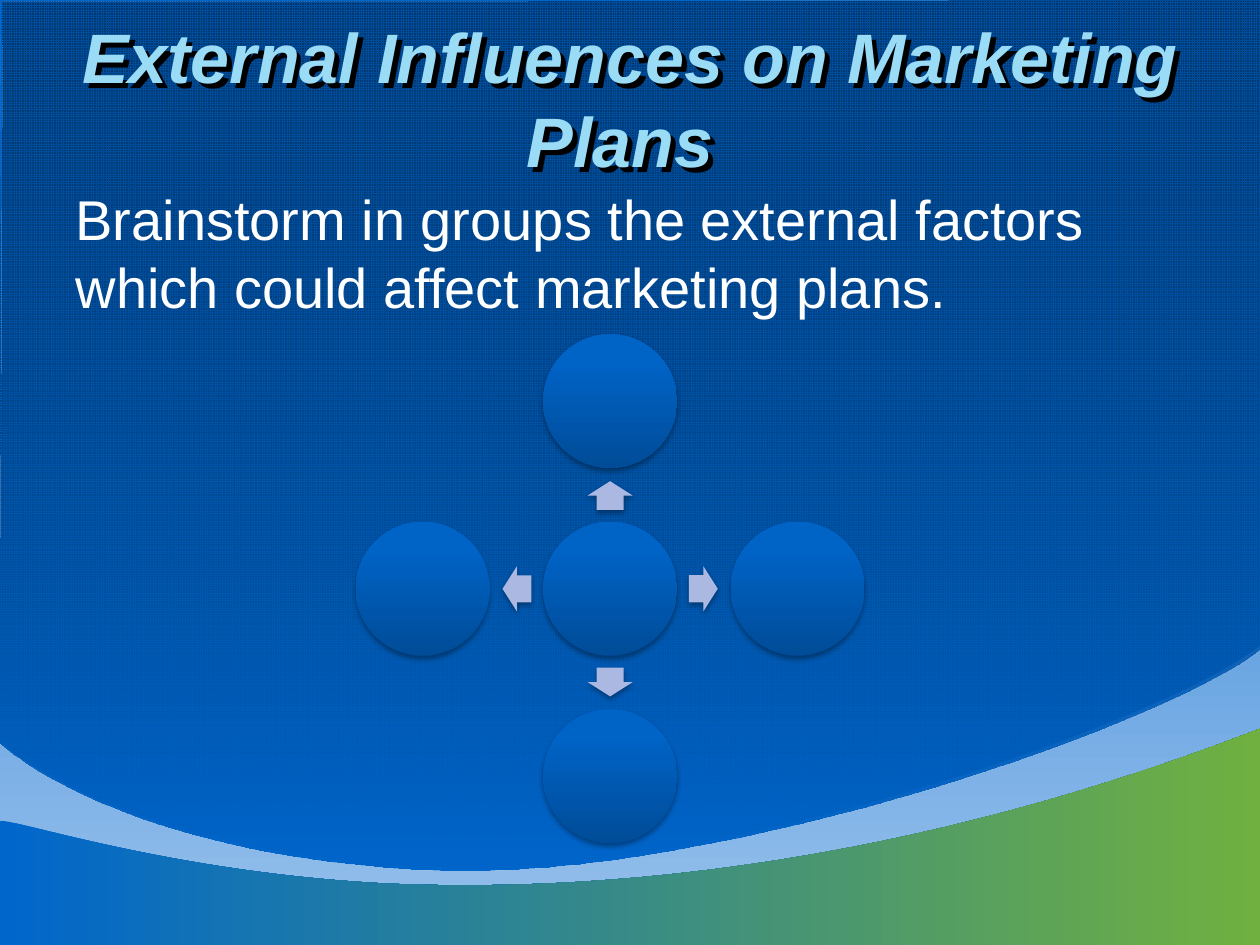
"""Builds the slide on external influences on marketing plans."""
import math

from lxml import etree
from pptx import Presentation
from pptx import util as u
from pptx.dml.color import RGBColor
from pptx.enum import dml, shapes, text
from pptx.oxml import ns


class Theme:
    font = "Arial"
    title_size, body_size = u.Pt(40), u.Pt(32)
    title, body = RGBColor.from_string("9ADCF6"), RGBColor.from_string("FFFFFF")
    blue, navy = "0066CC", "002F5E"
    grid, pale, green = "003D7B", "98C1EC", "70B040"
    ball_low, ball_high = "004C98", "0063C6"
    arrow = RGBColor.from_string("ABB8E2")


def gradient(fill, first, last, clockwise, end=1):
    fill.gradient()
    fill.gradient_angle = (360 - clockwise) % 360
    for stop, colour, pos in zip(fill.gradient_stops, (first, last), (0, end)):
        stop.color.rgb = RGBColor.from_string(colour)
        stop.position = pos


def add_shadow(sp, blur, dist, angle, opacity):
    sp.shadow.inherit = False
    effects = sp._element.spPr.find(ns.qn("a:effectLst"))
    shadow = etree.SubElement(effects, ns.qn("a:outerShdw"), blurRad=str(u.Pt(blur)),
                              dist=str(u.Pt(dist)), dir=str(angle * 60000), rotWithShape="0")
    colour = etree.SubElement(shadow, ns.qn("a:srgbClr"), val="000000")
    etree.SubElement(colour, ns.qn("a:alpha"), val=str(opacity * 1000))


prs = Presentation()
prs.slide_width, prs.slide_height = u.Cm(25.4), u.Cm(19.05)
s = prs.slides.add_slide(prs.slide_layouts[1])
gradient(s.background.fill, Theme.blue, Theme.pale, 90)

sky = [(-0.05, 14.91), (0.25, 15.21), (2.79, 17.22), (8.69, 17.48),
       (14.58, 17.73), (23.8, 14.4), (25.43, 12.98),
       (25.43, -0.05), (0, 0), (0.03, 0.05)]
ground = [(0, 16.56), (0.08, 16.43), (3.3, 17.58), (7.77, 17.81),
          (12.24, 18.01), (18.36, 17.42), (25.43, 14.68),
          (25.4, 19.13), (-0.05, 19.1)]
waves = []
for outline, shift in ((sky, 0), (sky, 0.05), (ground, 0)):
    points = [(u.Cm(x + shift), u.Cm(y + shift)) for x, y in outline]
    builder = s.shapes.build_freeform(*points[0])
    builder.add_line_segments(points[1:], close=True)
    sp = builder.convert_to_shape()
    sp.line.fill.background()
    sp.shadow.inherit = False
    lines = list(sp._element.spPr.iter(ns.qn("a:lnTo")))
    for start in (0, 3):
        curve = etree.Element(ns.qn("a:cubicBezTo"))
        lines[start].addprevious(curve)
        for line in lines[start:start + 3]:
            curve.append(line[0])
            line.getparent().remove(line)
    waves.append(sp)

texture, glow, hill = waves
texture.fill.patterned()
texture.fill.pattern = dml.MSO_PATTERN.SMALL_GRID
texture.fill.fore_color.rgb = RGBColor.from_string(Theme.blue)
texture.fill.back_color.rgb = RGBColor.from_string(Theme.grid)
gradient(glow.fill, Theme.navy, Theme.blue, 90)
navy = next(glow._element.spPr.iter(ns.qn("a:srgbClr")))
etree.SubElement(navy, ns.qn("a:alpha"), val="46000")
gradient(hill.fill, Theme.blue, Theme.green, 0)

title, body = s.shapes.title, s.placeholders[1]
for sp, top, height, words, size, colour in (
        (title, 0.76, 2.41, "External Influences on Marketing Plans ",
         Theme.title_size, Theme.title),
        (body, 3.6, 13.41,
         "Brainstorm in groups the external factors which could affect marketing plans.",
         Theme.body_size, Theme.body)):
    s.shapes._spTree.append(sp._element)
    sp.left, sp.top, sp.width, sp.height = u.Cm(1.27), u.Cm(top), u.Cm(22.86), u.Cm(height)
    tf = sp.text_frame
    tf.word_wrap, tf.auto_size = True, text.MSO_AUTO_SIZE.NONE
    r = tf.paragraphs[0].add_run()
    r.text = words
    r.font.size, r.font.name, r.font.color.rgb = size, Theme.font, colour

title.text_frame.vertical_anchor = text.MSO_ANCHOR.MIDDLE
p = title.text_frame.paragraphs[0]
p.alignment = text.PP_ALIGN.CENTER
r = p.runs[0]
r.font.bold = r.font.italic = True
title.fill.background()
add_shadow(title, 0, 4, 45, 100)

pPr = body.text_frame.paragraphs[0]._p.get_or_add_pPr()
pPr.set("marL", "0")
pPr.set("indent", "0")
etree.SubElement(pPr, ns.qn("a:buNone"))

centre_x, centre_y = 12.3, 11.87
ball, arrow = (2.7, 2.7), (0.58, 0.91)
items = [(0, 0, ball)]
for angle in (270, 0, 90, 180):
    items += [(angle, 1.88, arrow), (angle, 3.78, ball)]

for angle, reach, (width, height) in items:
    is_ball = width == height
    x = centre_x + reach * math.cos(math.radians(angle)) - width / 2
    y = centre_y + reach * math.sin(math.radians(angle)) - height / 2
    kind = shapes.MSO_SHAPE.OVAL if is_ball else shapes.MSO_SHAPE.RIGHT_ARROW
    sp = s.shapes.add_shape(kind, u.Cm(x), u.Cm(y), u.Cm(width), u.Cm(height))
    if is_ball:
        gradient(sp.fill, Theme.ball_low, Theme.ball_high, 270, 0.8)
    else:
        sp.rotation = angle
        sp.adjustments[0], sp.adjustments[1] = 0.6, 0.5
        sp.fill.solid()
        sp.fill.fore_color.rgb = Theme.arrow
    sp.line.fill.background()
    add_shadow(sp, 3.1, 1.8, 90, 35)

prs.save("out.pptx")
